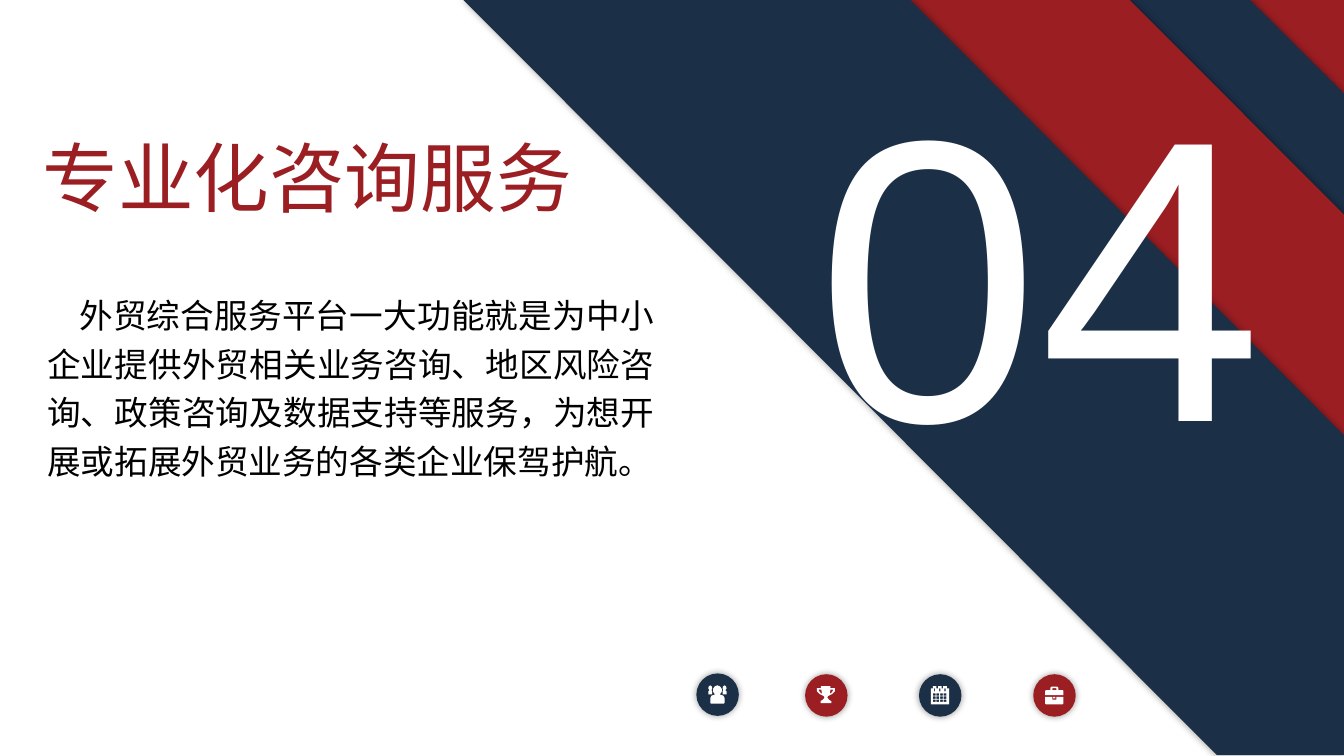
from lxml import etree
from pptx import Presentation
from pptx.dml.color import RGBColor
from pptx.enum.shapes import MSO_SHAPE as Shape
from pptx.enum.text import MSO_ANCHOR as Anchor, PP_ALIGN as Align
from pptx.oxml import parse_xml
from pptx.oxml.ns import nsdecls, qn
from pptx.util import Cm, Pt

NAVY, RED, WHITE, BLACK = "1B2F47", "9B1E23", "FFFFFF", "000000"
UNIT = Cm(0.01)  # freeform points are in hundredths of a centimetre
SHADOW = (f'<a:effectLst {nsdecls("a")}><a:outerShdw blurRad="{Pt(5)}" dist="0" dir="0">'
          f'<a:srgbClr val="{BLACK}"><a:alpha val="40000"/></a:srgbClr></a:outerShdw></a:effectLst>')


def paint(target, colour):
    """Give a shape or a font a solid colour."""
    target.fill.solid()
    target.fill.fore_color.rgb = RGBColor.from_string(colour)


def write(box, text, place, size, colour, align=Align.LEFT, inset=(0.25, 0.13),
          spacing=1.0, indent=0):
    """Place a text shape and fill it with one formatted paragraph."""
    box.left, box.top, box.width, box.height = [Cm(length) for length in place]
    frame = box.text_frame
    frame.word_wrap = True
    frame.vertical_anchor = Anchor.TOP
    frame.margin_left = frame.margin_right = Cm(inset[0])
    frame.margin_top = frame.margin_bottom = Cm(inset[1])
    para = frame.paragraphs[0]
    para.alignment, para.line_spacing, para.space_before = align, spacing, Pt(0)
    settings = para._p.get_or_add_pPr()
    settings.set("marL", "0")
    settings.set("indent", str(Cm(indent)))
    etree.SubElement(settings, qn("a:buNone"))
    span = para.add_run()
    span.text = text
    span.font.name, span.font.size = "Arial", Pt(size)
    paint(span.font, colour)


deck = Presentation()
deck.slide_width, deck.slide_height = Cm(33.87), Cm(19.05)
page = deck.slides.add_slide(deck.slide_layouts[1])
shapes = page.shapes

# Title and paragraph
write(shapes.title, "专业化咨询服务", (1.07, 3.3, 14.33, 2.31), 54, RED, inset=(0, 0))
write(page.placeholders[1],
      "外贸综合服务平台一大功能就是为中小企业提供外贸相关业务咨询、地区风险咨询、"
      "政策咨询及数据支持等服务，为想开展或拓展外贸业务的各类企业保驾护航。",
      (0.94, 7.11, 15.8, 5.03), 24, BLACK, align=Align.JUSTIFY, spacing=1.2, indent=0.81)

# Diagonal bands, from back to front
right = 3387
bands = [
    (RED, [(right, 760), (2634, 0), (right, 0)]),
    (NAVY, [(right, 1085), (2306, 0), (3150, 0), (right, 236)]),
    (RED, [(right, 1633), (1760, 0), (2847, 0), (right, 541)]),
    (NAVY, [(right, 1902), (3066, 1902), (1168, 0), (2294, 0), (right, 1097)]),
]
shadowed = []
for colour, points in bands:
    builder = shapes.build_freeform(*points[0], scale=UNIT)
    builder.add_line_segments(points[1:], close=True)
    shadowed.append((builder.convert_to_shape(), colour))

# Icon outlines on a 46 by 46 grid
side_person = [(0, 23), (0, 15), (3, 12), (0, 8), (1, 3), (5, 0), (9, 3), (10, 8),
               (8, 12), (10, 15), (10, 23)]
people = [
    [(5, 44), (5, 32), (8, 26), (17, 23), (12, 16), (12, 9), (16, 3), (23, 0), (30, 3),
     (34, 9), (34, 16), (29, 23), (38, 26), (41, 32), (41, 44), (39, 46), (7, 46)],
    side_person,
    [(46 - x, y) for x, y in side_person],
]
handle = [(5, 9), (11, 9), (13, 20), (8, 16), (5, 12)]
trophy = [
    [(10, 0), (34, 0), (34, 5), (45, 5), (45, 13), (38, 20), (28, 25), (26, 29), (30, 34),
     (36, 38), (36, 43), (9, 43), (9, 38), (15, 34), (19, 29), (17, 25), (7, 20), (0, 13),
     (0, 5), (10, 5)],
    handle,
    [(45 - x, y) for x, y in handle],
]
calendar_rects = [(0, 6, 46, 40)]
calendar_rects += [(5 + 13 * ring, 0, 9, 6) for ring in range(3)]
calendar_rects += [(8 + 13 * ring, 6, 3, 7) for ring in range(3)]
calendar_rects += [(5 + 9 * column, 18 + 8 * row, 7, 6) for row in range(3) for column in range(4)]
calendar = [[(x, y), (x + w, y), (x + w, y + h), (x, y + h)] for x, y, w, h in calendar_rects]
briefcase = [
    [(0, 23), (0, 12), (2, 10), (13, 10), (13, 4), (16, 1), (30, 1), (33, 4), (33, 10),
     (44, 10), (46, 12), (46, 23)],
    [(18, 10), (28, 10), (28, 5), (18, 5)],
    [(0, 27), (18, 27), (18, 34), (28, 34), (28, 27), (46, 27), (46, 44), (44, 46), (2, 46),
     (0, 44)],
    [(20, 27), (26, 27), (26, 31), (20, 31)],
]

# Round badges with their icons
badges = [(17.55, 16.97, NAVY, people), (20.29, 16.99, RED, trophy),
          (23.16, 16.99, NAVY, calendar), (26.04, 16.99, RED, briefcase)]
for left, top, colour, outlines in badges:
    badge = shapes.add_shape(Shape.OVAL, Cm(left), Cm(top), Cm(1.07), Cm(1.07))
    shadowed.append((badge, colour))
    builder = shapes.build_freeform(*outlines[0][0], scale=UNIT)
    for number, points in enumerate(outlines):
        if number:
            builder.move_to(*points[0])
        builder.add_line_segments(points[1:], close=True)
    icon = builder.convert_to_shape(Cm(left + 0.3), Cm(top + 0.3))
    paint(icon, WHITE)
    icon.line.fill.background()
    icon.shadow.inherit = False

# Fill and soft shadow of the bands and badges
for shape, colour in shadowed:
    paint(shape, colour)
    shape.line.fill.background()
    shape._element.spPr.append(parse_xml(SHADOW))

# Chapter number
number_box = shapes.add_textbox(0, 0, 0, 0)
write(number_box, "04", (19, 0.36, 14.4, 12.52), 287, WHITE, align=Align.CENTER)

deck.save("out.pptx")
